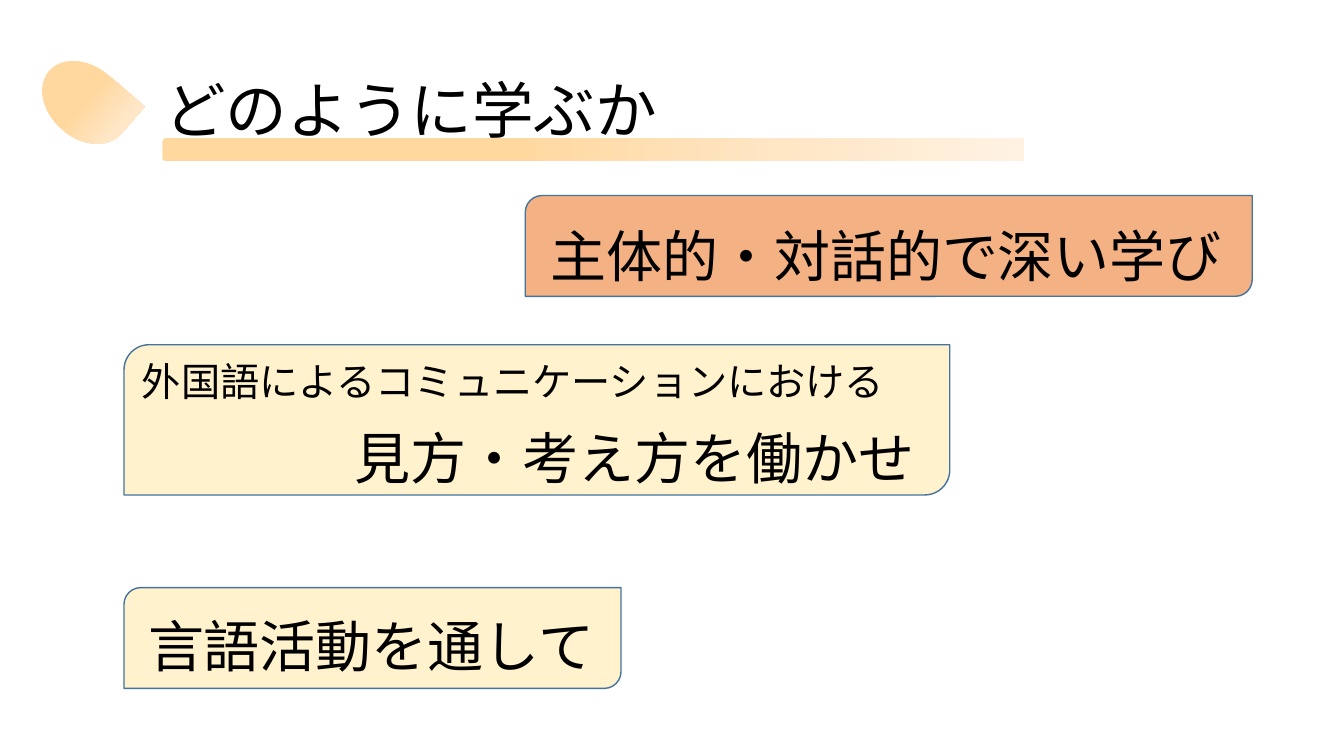
from lxml.etree import SubElement
from pptx import Presentation
from pptx.dml.color import RGBColor
from pptx.enum.shapes import MSO_SHAPE as SHAPE
from pptx.enum.text import MSO_ANCHOR as ANCHOR
from pptx.oxml.ns import qn
from pptx.util import Inches, Pt

FONT = "Noto Sans CJK JP"
ORANGE, CREAM, BORDER = "F4B183", "FFF2CC", "43739E"
FADE = ["FFD8A0", "FFE6C5", "FFF2E3"]


def color(value):
    """Turn a hex string into a colour."""
    return RGBColor.from_string(value)


def add_text(s, text, x, y, w, h, size=40, anchor=ANCHOR.TOP, spacing=1.0):
    """Place one line of text in a wrapping box."""
    sp = s.shapes.add_textbox(Inches(x), Inches(y), Inches(w), Inches(h))
    tf = sp.text_frame
    tf.word_wrap = True
    tf.vertical_anchor = anchor
    p = tf.paragraphs[0]
    p.line_spacing = spacing
    r = p.add_run()
    r.text = text
    r.font.size = Pt(size)
    r.font.name = FONT
    r.font.color.rgb = color("000000")
    SubElement(r.font._element, qn("a:ea"), typeface=FONT)


def add_shape(s, kind, x, y, w, h):
    """Place a preset shape without a shadow."""
    sp = s.shapes.add_shape(kind, Inches(x), Inches(y), Inches(w), Inches(h))
    sp.shadow.inherit = False
    return sp


def fade(sp, positions):
    """Fill a borderless shape with a gradient running left to right."""
    sp.line.fill.background()
    sp.fill.gradient()
    sp.fill.gradient_angle = 0
    stops = sp.fill._xPr.find(qn("a:gradFill")).find(qn("a:gsLst"))
    for stop in list(stops):
        stops.remove(stop)
    for position, value in zip(positions, FADE):
        stop = SubElement(stops, qn("a:gs"), pos=str(position * 1000))
        SubElement(stop, qn("a:srgbClr"), val=value)


def add_heading(s, x, y, w, h, text):
    """Draw the title with its underline bar and petal."""
    add_text(s, text, x, y, w, h, size=44, anchor=ANCHOR.MIDDLE, spacing=0.9)
    bar = add_shape(s, SHAPE.ROUNDED_RECTANGLE, x + 0.69, y + 0.97, 8.55, 0.23)
    fade(bar, [41, 72, 100])
    petal = add_shape(s, SHAPE.TEAR, x - 0.55, y + 0.26, 0.95, 0.71)
    petal.rotation = 40.9
    fade(petal, [50, 74, 100])


def add_panel(s, x, y, w, h, fill, lines):
    """Draw a panel and its lines, each given as text, offset, size and points."""
    sp = add_shape(s, SHAPE.ROUND_2_DIAG_RECTANGLE, x, y, w, h)
    sp.fill.solid()
    sp.fill.fore_color.rgb = color(fill)
    sp.line.color.rgb = color(BORDER)
    sp.line.width = Pt(1)
    for text, dx, dy, tw, th, size in lines:
        add_text(s, text, x + dx, y + dy, tw, th, size=size)


def main():
    """Build the slide and save it."""
    prs = Presentation()
    prs.slide_width, prs.slide_height = Inches(13.33), Inches(7.5)
    s = prs.slides.add_slide(prs.slide_layouts[6])
    add_heading(s, 0.92, 0.4, 11.5, 1.45, "　どのように学ぶか")
    add_panel(s, 5.21, 1.94, 7.21, 1, ORANGE, [
        ("主体的・対話的で深い学び", 0.15, 0.21, 7.21, 0.77, 40)])
    add_panel(s, 1.23, 3.42, 8.19, 1.49, CREAM, [
        ("見方・考え方を働かせ", 2.19, 0.73, 7.21, 0.77, 40),
        ("外国語によるコミュニケーションにおける", 0.08, 0.08, 7.62, 0.57, 28)])
    add_panel(s, 1.23, 5.83, 4.93, 1, CREAM, [
        ("言語活動を通して", 0.14, 0.19, 4.93, 0.77, 40)])
    prs.save("out.pptx")


if __name__ == "__main__":
    main()
